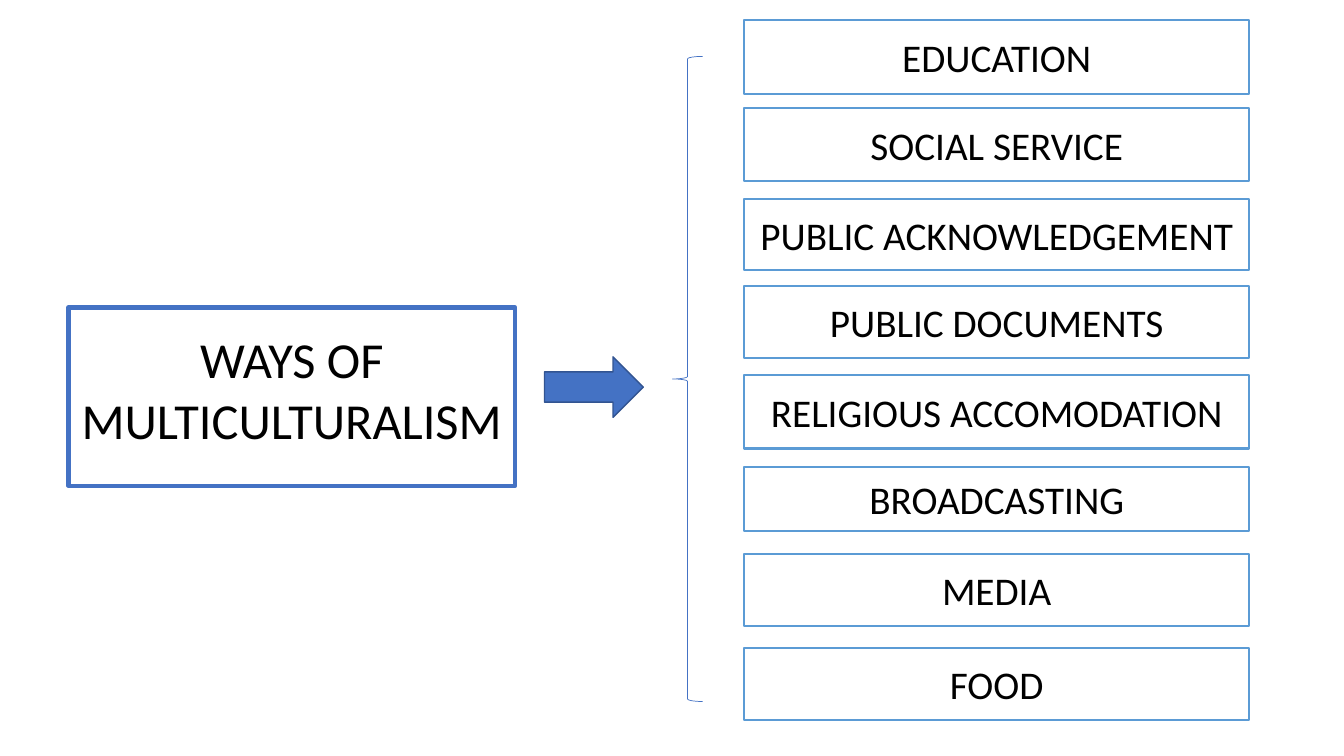
import dataclasses

import pptx
import pptx.dml.color
import pptx.enum.shapes
import pptx.enum.text
import pptx.util

PX = 9144  # EMU in one px, at 100 px to the inch
SHAPES = pptx.enum.shapes.MSO_SHAPE
ANCHORS = pptx.enum.text.MSO_ANCHOR


@dataclasses.dataclass(frozen=True)
class Theme:
    font: str = "Calibri"
    text: str = "000000"
    paper: str = "FFFFFF"
    accent: str = "4472C4"
    arrow_edge: str = "325491"
    way_edge: str = "5B9BD5"
    title_size: int = 36
    way_size: int = 28


THEME = Theme()

# Label, top and height in px
WAYS = [
    ("EDUCATION", 20, 73),
    ("SOCIAL SERVICE", 107, 73),
    ("PUBLIC ACKNOWLEDGEMENT", 197, 71),
    ("PUBLIC DOCUMENTS", 284, 71),
    ("RELIGIOUS ACCOMODATION", 372, 73),
    ("BROADCASTING", 463, 64),
    ("MEDIA", 550, 71),
    ("FOOD", 643, 71),
]


def emu(*lengths):
    return [pptx.util.Emu(length * PX) for length in lengths]


def rgb(color):
    return pptx.dml.color.RGBColor.from_string(color)


def add_outlined(slide, kind, box, line, weight, fill=None):
    shape = slide.shapes.add_shape(kind, *emu(*box))
    shape.shadow.inherit = False
    if fill:
        shape.fill.solid()
        shape.fill.fore_color.rgb = rgb(fill)
    else:
        shape.fill.background()
    shape.line.color.rgb = rgb(line)
    shape.line.width = pptx.util.Pt(weight)
    return shape


def write_centred(shape, text, size, anchor):
    frame = shape.text_frame
    frame.word_wrap = True
    frame.vertical_anchor = anchor
    paragraph = frame.paragraphs[0]
    paragraph.alignment = pptx.enum.text.PP_ALIGN.CENTER
    run = paragraph.add_run()
    run.text = text
    run.font.name = THEME.font
    run.font.size = pptx.util.Pt(size)
    run.font.color.rgb = rgb(THEME.text)


def add_topic(slide, box):
    left, top, width, height = box
    add_outlined(slide, SHAPES.RECTANGLE, box, THEME.accent, 3, THEME.paper)
    label = slide.shapes.add_textbox(*emu(left, top + 16, width, height - 15))
    write_centred(label, "WAYS OF MULTICULTURALISM", THEME.title_size, ANCHORS.TOP)


def add_link(slide, box):
    """Draw the arrow and the brace that lead from the topic to its ways."""
    left, top, width, height = box
    arrow = (left, top + 298, 98, 60)
    add_outlined(slide, SHAPES.RIGHT_ARROW, arrow, THEME.arrow_edge, 1, THEME.accent)
    brace = (left + width - 30, top, 30, height)
    add_outlined(slide, SHAPES.LEFT_BRACE, brace, THEME.accent, 0.5)


def add_ways(slide, box):
    left, top, width, _ = box
    for label, offset, height in WAYS:
        way_box = (left, top + offset, width, height)
        way = add_outlined(
            slide, SHAPES.RECTANGLE, way_box, THEME.way_edge, 1.5, THEME.paper
        )
        write_centred(way, label, THEME.way_size, ANCHORS.MIDDLE)


def main():
    presentation = pptx.Presentation()
    presentation.slide_width, presentation.slide_height = emu(1333, 750)
    slide = presentation.slides.add_slide(presentation.slide_layouts[6])
    add_topic(slide, (68, 305, 443, 177))
    add_link(slide, (540, 56, 157, 640))
    add_ways(slide, (738, 0, 501, 750))
    presentation.save("out.pptx")


if __name__ == "__main__":
    main()
